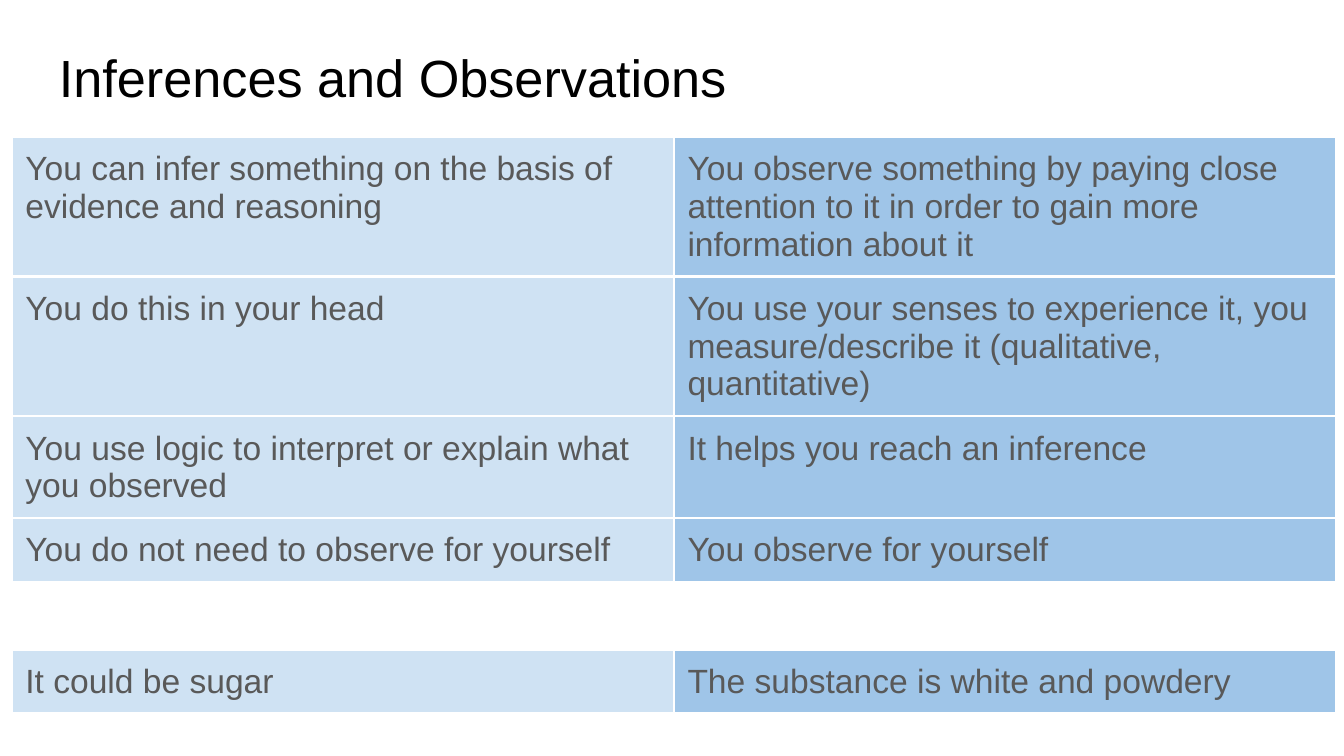
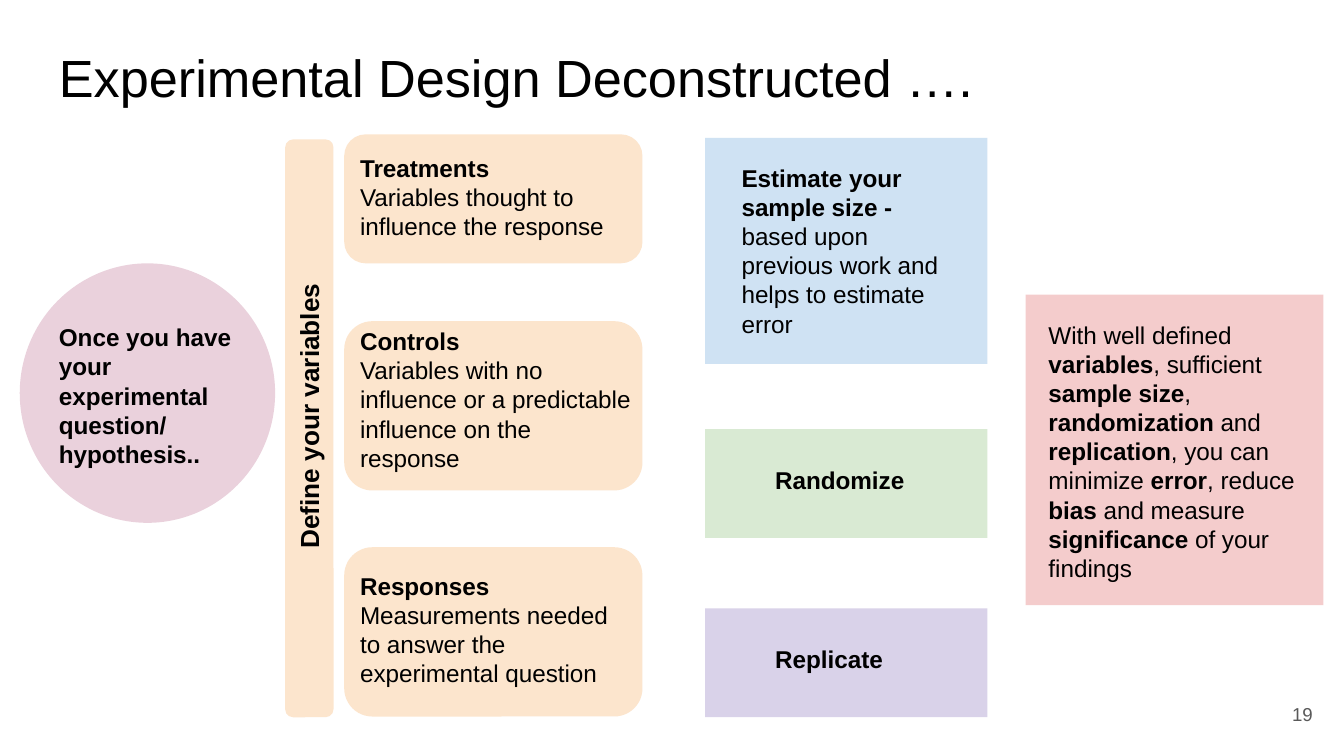
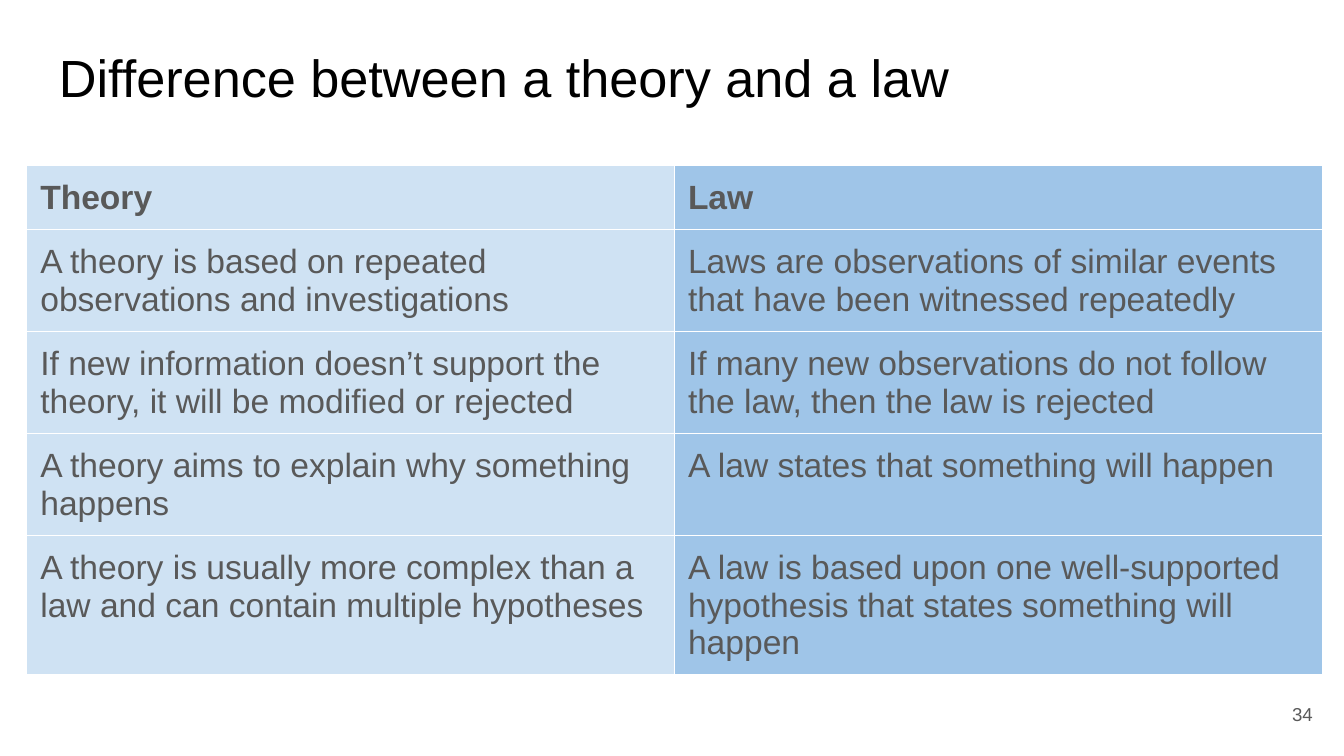
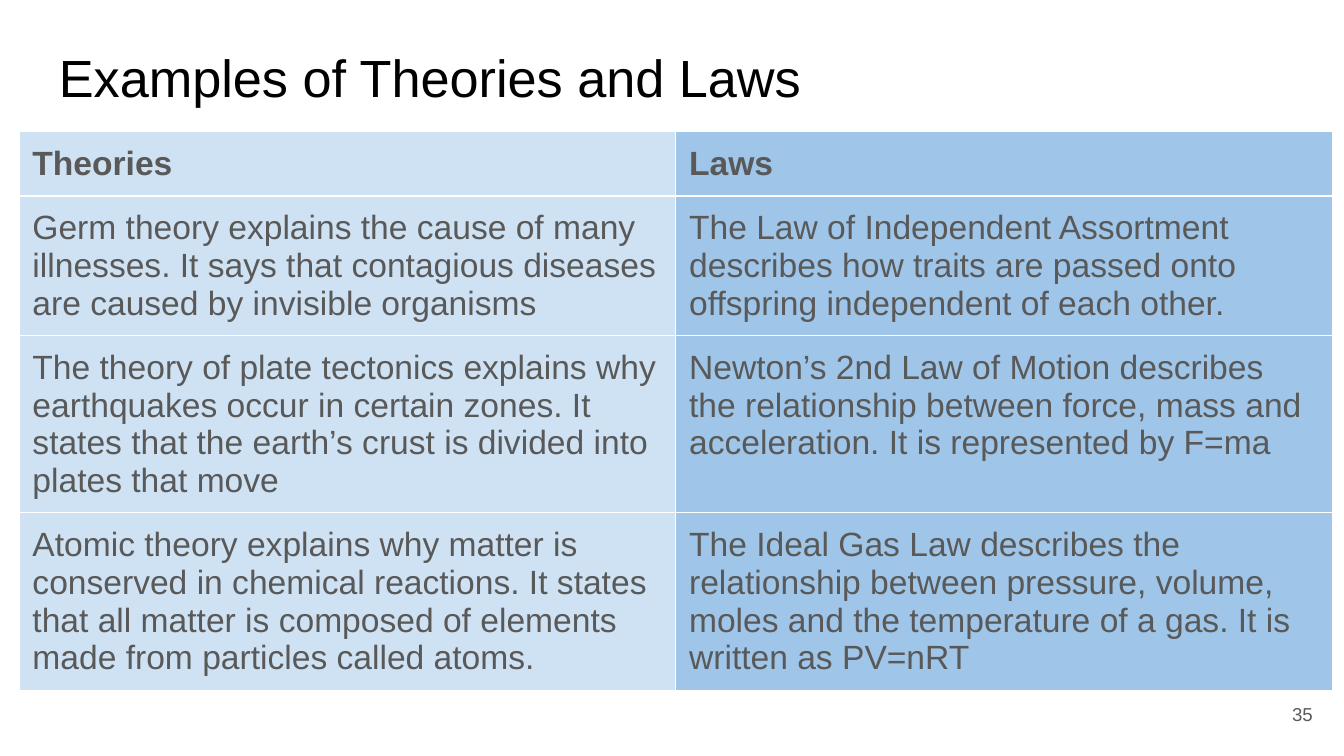
from lxml.etree import SubElement
from pptx import Presentation
from pptx.dml.color import RGBColor
from pptx.enum.shapes import MSO_SHAPE as Shape
from pptx.enum.text import MSO_ANCHOR as Anchor, PP_ALIGN as Align
from pptx.oxml.ns import qn
from pptx.util import Pt

COLORS = {
    "white": "FFFFFF", "black": "000000", "gray": "595959",
    "light blue": "CFE2F3", "blue": "9FC5E8", "pink": "EAD1DC",
    "orange": "FCE5CD", "green": "D9EAD3", "red": "F4CCCC", "purple": "D9D2E9",
}
FONT = "Arial"
INSET = 7.2
CELL_BOTTOM_INSET = 1
ROW_PADDING = 14.2
LINE_HEIGHT = 20.2
GAP_HEIGHT = 36

# Each table row: number of text lines, left text, right text
INFERENCE_ROWS = [
    (3, "You can infer something on the basis of evidence and reasoning",
     "You observe something by paying close attention to it in order to gain more information about it"),
    (3, "You do this in your head",
     "You use your senses to experience it, you measure/describe it (qualitative, quantitative)"),
    (2, "You use logic to interpret or explain what you observed",
     "It helps you reach an inference"),
    (1, "You do not need to observe for yourself", "You observe for yourself"),
    (0, "", ""),
    (1, "It could be sugar", "The substance is white and powdery"),
]
DIFFERENCE_ROWS = [
    (1, "*Theory*", "*Law*"),
    (2, "A theory is based on repeated observations and investigations",
     "Laws are observations of similar events that have been witnessed repeatedly"),
    (2, "If new information doesn’t support the theory, it will be modified or rejected",
     "If many new observations do not follow the law, then the law is rejected"),
    (2, "A theory aims to explain why something happens",
     "A law states that something will happen"),
    (3, "A theory is usually more complex than a law and can contain multiple hypotheses",
     "A law is based upon one well-supported hypothesis that states something will happen"),
]
EXAMPLE_ROWS = [
    (1, "*Theories*", "*Laws*"),
    (3, "Germ theory explains the cause of many illnesses. It says that contagious diseases "
     "are caused by invisible organisms",
     "The Law of Independent Assortment describes how traits are passed onto offspring "
     "independent of each other."),
    (4, "The theory of plate tectonics explains why earthquakes occur in certain zones. "
     "It states that the earth’s crust is divided into plates that move",
     "Newton’s 2nd Law of Motion describes the relationship between force, mass and "
     "acceleration. It is represented by F=ma"),
    (4, "Atomic theory explains why matter is conserved in chemical reactions. It states that "
     "all matter is composed of elements made from particles called atoms.",
     "The Ideal Gas Law describes the relationship between pressure, volume, moles and the "
     "temperature of a gas. It is written as PV=nRT"),
]


def color(name):
    return RGBColor.from_string(COLORS[name])


def points(*lengths):
    return [Pt(length) for length in lengths]


def set_insets(target, bottom=INSET):
    """Set the margins of a text frame or a table cell."""
    target.margin_left = target.margin_right = target.margin_top = Pt(INSET)
    target.margin_bottom = Pt(bottom)


def write(frame, lines, size, color_name="black", align=Align.LEFT):
    """Write one paragraph a line; text between asterisks is bold."""
    for number, line in enumerate(lines):
        para = frame.add_paragraph() if number else frame.paragraphs[0]
        para.alignment = align
        for part, text in enumerate(line.split("*")):
            if not text:
                continue
            span = para.add_run()
            span.text = text
            span.font.name = FONT
            span.font.size = Pt(size)
            span.font.bold = part % 2 == 1
            span.font.color.rgb = color(color_name)


def add_text(page, place, *lines, size=13, color_name="black",
             align=Align.LEFT, anchor=Anchor.TOP):
    box = page.shapes.add_textbox(*points(*place))
    frame = box.text_frame
    frame.word_wrap = True
    frame.vertical_anchor = anchor
    set_insets(frame)
    write(frame, lines, size, color_name, align)
    return box


def add_block(page, kind, place, fill):
    block = page.shapes.add_shape(kind, *points(*place))
    block.shadow.inherit = False
    block.fill.solid()
    block.fill.fore_color.rgb = color(fill)
    block.line.fill.background()


def add_page(deck, title):
    page = deck.slides.add_slide(deck.slide_layouts[6])
    add_text(page, (24.5, 17.3, 671, 45.4), title, size=28)
    return page


def add_page_number(page, number):
    add_text(page, (667.2, 367.2, 43.2, 31), str(number), size=10,
             color_name="gray", align=Align.RIGHT, anchor=Anchor.MIDDLE)


def set_borders(cell, width):
    properties = cell._tc.get_or_add_tcPr()
    for side in ("lnL", "lnR", "lnT", "lnB"):
        line = SubElement(properties, qn(f"a:{side}"), w=str(Pt(width)))
        fill = SubElement(line, qn("a:solidFill"))
        SubElement(fill, qn("a:srgbClr"), val=COLORS["white"])


def row_height(line_count):
    return ROW_PADDING + LINE_HEIGHT * line_count if line_count else GAP_HEIGHT


def add_comparison(page, left, top, column_width, rows, border=0.75):
    """Add a two-column table; a row without text becomes a white gap."""
    heights = [row_height(line_count) for line_count, *_ in rows]
    table = page.shapes.add_table(
        len(rows), 2, *points(left, top, 2 * column_width, sum(heights))).table
    table.first_row = table.horz_banding = False
    for column in table.columns:
        column.width = Pt(column_width)
    for table_row, height, (_, *texts) in zip(table.rows, heights, rows):
        table_row.height = Pt(height)
        for cell, text, fill in zip(table_row.cells, texts, ("light blue", "blue")):
            set_insets(cell, CELL_BOTTOM_INSET)
            set_borders(cell, border)
            cell.fill.solid()
            cell.fill.fore_color.rgb = color(fill if text else "white")
            write(cell.text_frame, [text], 18, "gray")


def add_question(page):
    add_block(page, Shape.OVAL, (10.6, 141.1, 136.8, 139), "pink")
    add_text(page, (24.5, 165.6, 107.3, 98.6),
             "*Once you have your experimental question/*", "*hypothesis..*")


def add_variables(page):
    add_block(page, Shape.ROUNDED_RECTANGLE, (152.8, 74.7, 25.9, 309.6), "orange")
    label = add_text(page, (73.4, 196.6, 180.7, 28.1), "*Define your variables*", size=14)
    label.rotation = 270
    variables = [
        (72, 69.1, 74.9, "*Treatments*", "Variables thought to influence the response"),
        (172.1, 90.7, 167.6, "*Controls*",
         "Variables with no influence or a predictable influence on the response"),
        (293.2, 90.7, 298.8, "*Responses*",
         "Measurements needed to answer the experimental question"),
    ]
    for top, height, text_top, name, meaning in variables:
        add_block(page, Shape.ROUNDED_RECTANGLE, (184.4, top, 159.8, height), "orange")
        add_text(page, (185.8, text_top, 159.8, height), name, meaning)


def add_steps(page):
    left, width = 377.8, 151.2
    add_block(page, Shape.RECTANGLE, (left, 73.9, width, 121), "light blue")
    add_text(page, (390.2, 80.2, 131, 98.6),
             "*Estimate your sample size - *based upon previous work and helps to estimate error")
    for top, name, fill in ((229.9, "Randomize", "green"), (325.9, "Replicate", "purple")):
        add_block(page, Shape.RECTANGLE, (left, top, width, 58.3), fill)
        add_text(page, (408.2, top + 12, 107.3, 34), f"*{name}*")


def add_outcome(page):
    add_block(page, Shape.RECTANGLE, (549.4, 157.9, 159.6, 166.3), "red")
    add_text(page, (554.6, 164.2, 147.6, 98.6),
             "With well defined *variables*, sufficient *sample size*, *randomization* and "
             "*replication*, you can minimize *error*, reduce *bias* and measure "
             "*significance* of your findings")


def main():
    deck = Presentation()
    deck.slide_width, deck.slide_height = points(720, 405)

    page = add_page(deck, "Inferences and Observations")
    add_comparison(page, 6.4, 73.4, 354.7, INFERENCE_ROWS, border=1.5)

    page = add_page(deck, "Experimental Design Deconstructed ….")
    add_question(page)
    add_variables(page)
    add_steps(page)
    add_outcome(page)
    add_page_number(page, 19)

    page = add_page(deck, "Difference between a theory and a law")
    add_comparison(page, 14.4, 88.7, 347, DIFFERENCE_ROWS)
    add_page_number(page, 34)

    page = add_page(deck, "Examples of Theories and Laws")
    add_comparison(page, 10.2, 70.6, 351.8, EXAMPLE_ROWS)
    add_page_number(page, 35)

    deck.save("out.pptx")


if __name__ == "__main__":
    main()
